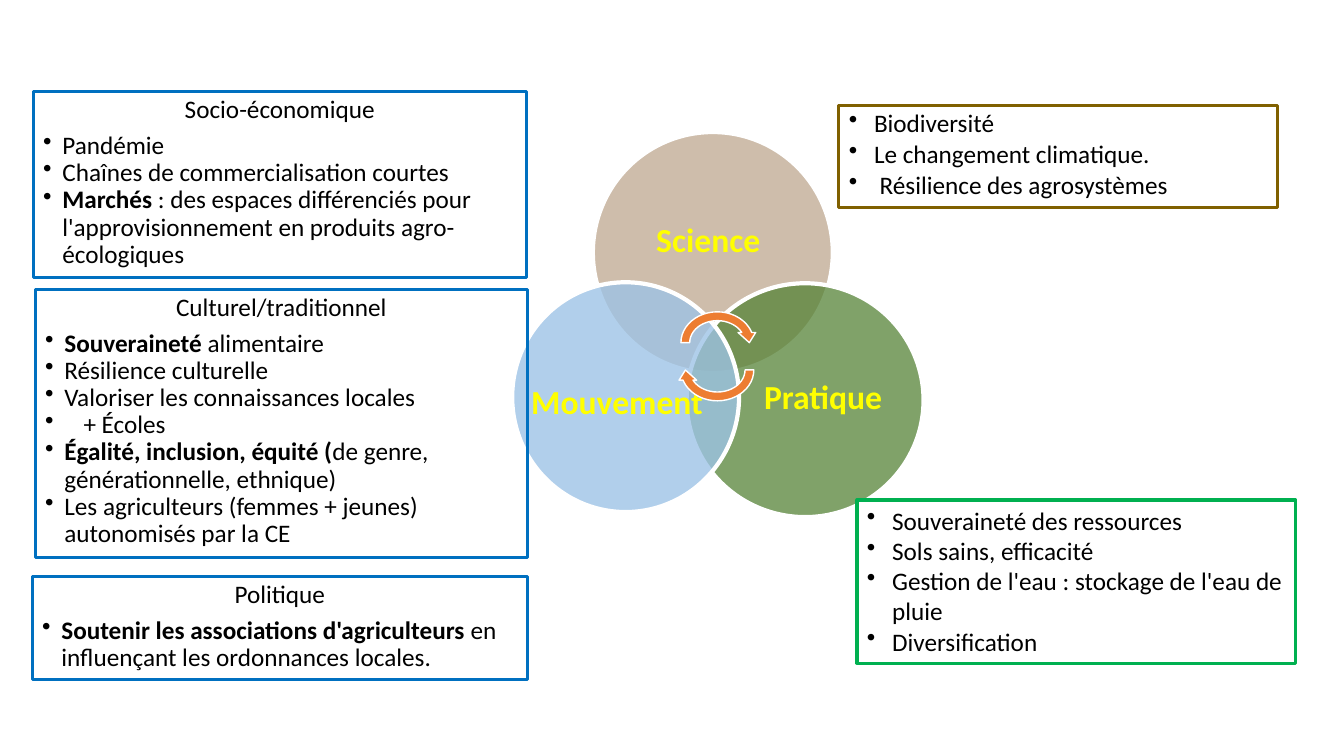
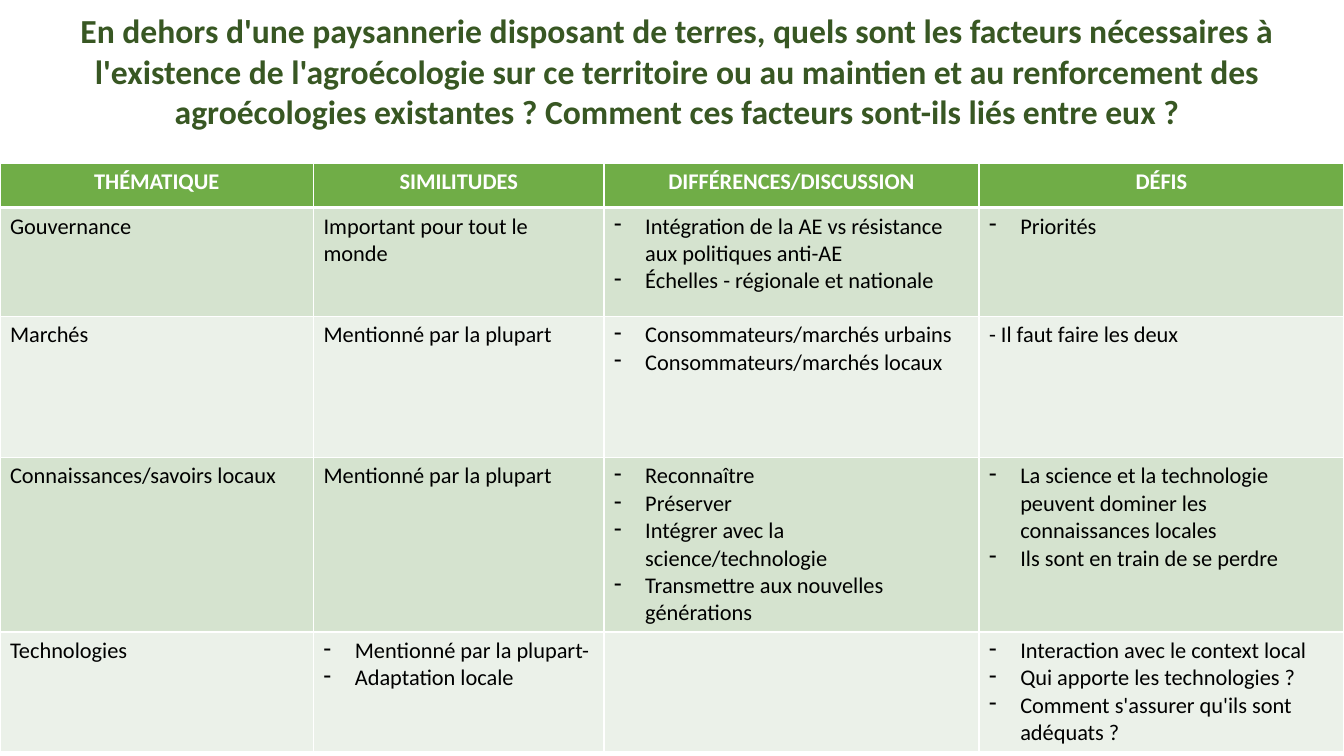
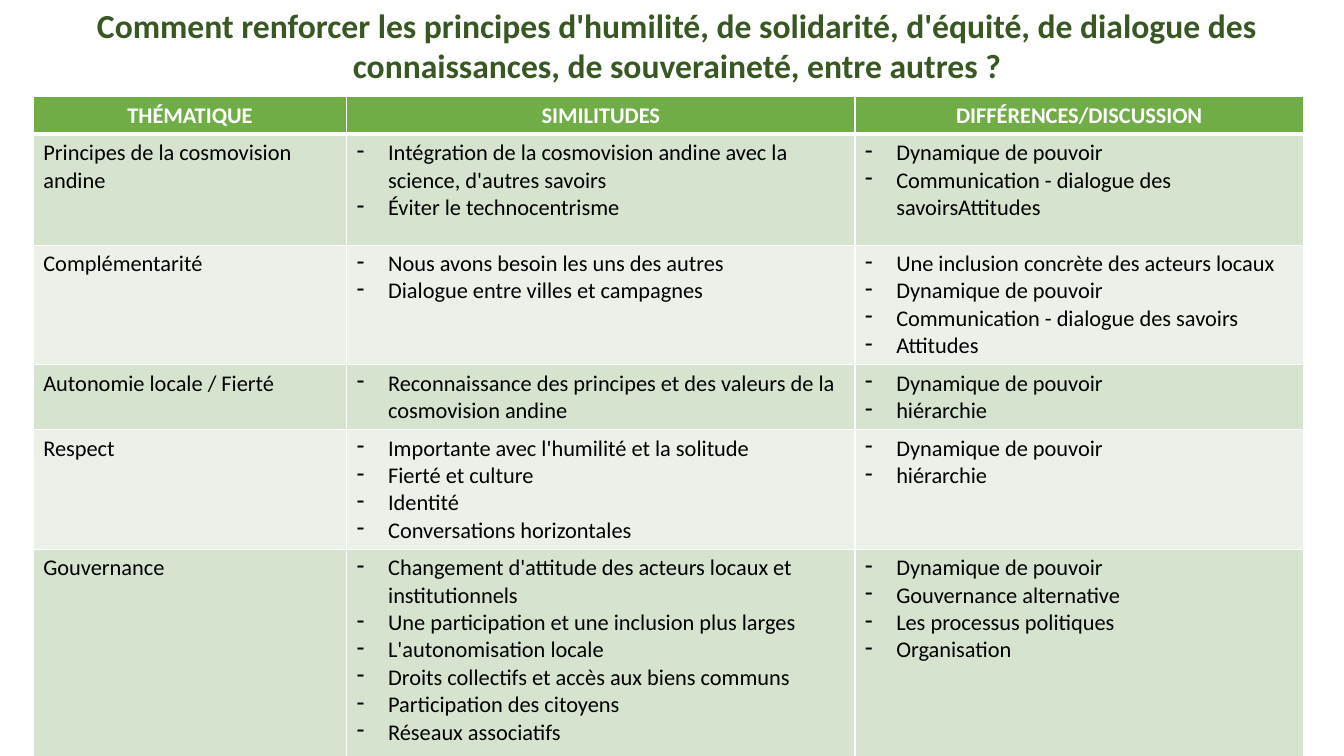
from lxml.etree import SubElement
from pptx import Presentation
from pptx.dml.color import RGBColor
from pptx.enum.shapes import MSO_SHAPE
from pptx.enum.text import MSO_ANCHOR, PP_ALIGN
from pptx.oxml.ns import qn
from pptx.util import Pt

PX = 9144
FONT = "Calibri"
BLACK, WHITE, YELLOW = "000000", "FFFFFF", "FFFF00"
BLUE, GREEN, BROWN, ORANGE = "0070C0", "00B050", "806000", "ED7D31"
TITLE_GREEN, HEADER_GREEN = "385723", "70AD47"
BANDS = ("D5E3CF", "EBF1E9")
THEMES = "THÉMATIQUE"
SIMILARITIES = "SIMILITUDES"
DIFFERENCES = "DIFFÉRENCES/DISCUSSION"
POWER = "Dynamique de pouvoir"

CIRCLES = [
    ("Science", "A2825E", 52, (588, 131, 238, 239), (641, 212, 125, 50)),
    ("Pratique", "548235", 74, (681, 281, 235, 232), (748, 368, 139, 50)),
    ("Mouvement", "9DC3E6", 79, (508, 280, 225, 228), (517, 373, 192, 50)),
]

MOVEMENT_BOXES = [
    ((33, 91, 489, 184), "Socio-économique", [
        "Pandémie",
        "Chaînes de commercialisation courtes",
        ("Marchés", " : des espaces différenciés pour l'approvisionnement en produits agro-écologiques"),
    ]),
    ((35, 287, 488, 266), "Culturel/traditionnel", [
        ("Souveraineté", " alimentaire"),
        "Résilience culturelle",
        "Valoriser les connaissances locales",
        "+ Écoles",
        ("Égalité, inclusion, équité (", "de genre, générationnelle, ethnique)"),
        "Les agriculteurs (femmes + jeunes) autonomisés par la CE",
    ]),
    ((32, 572, 491, 102), "Politique", [
        ("Soutenir les associations d'agriculteurs ", "en influençant les ordonnances locales."),
    ]),
]

PRACTICE_ITEMS = [
    "Souveraineté des ressources",
    "Sols sains, efficacité",
    "Gestion de l'eau : stockage de l'eau de pluie",
    "Diversification",
]
SCIENCE_ITEMS = ["Biodiversité", "Le changement climatique.", " Résilience des agrosystèmes"]

FACTORS_TITLE = (
    "En dehors d'une paysannerie disposant de terres, quels sont les facteurs nécessaires à "
    "l'existence de l'agroécologie sur ce territoire ou au maintien et au renforcement des "
    "agroécologies existantes ? Comment ces facteurs sont-ils liés entre eux ?"
)
FACTORS = [
    [THEMES, SIMILARITIES, DIFFERENCES, "DÉFIS"],
    ["Gouvernance", "Important pour tout le monde",
     ["Intégration de la AE vs résistance aux politiques anti-AE",
      "Échelles - régionale et nationale"],
     ["Priorités"]],
    ["Marchés", "Mentionné par la plupart",
     ["Consommateurs/marchés urbains", "Consommateurs/marchés locaux"],
     "- Il faut faire les deux"],
    ["Connaissances/savoirs locaux", "Mentionné par la plupart",
     ["Reconnaître", "Préserver", "Intégrer avec la science/technologie",
      "Transmettre aux nouvelles générations"],
     ["La science et la technologie peuvent dominer les connaissances locales",
      "Ils sont en train de se perdre"]],
    ["Technologies", ["Mentionné par la plupart-", "Adaptation locale"], [],
     ["Interaction avec le context local", "Qui apporte les technologies ?",
      "Comment s'assurer qu'ils sont adéquats ?"]],
]

PRINCIPLES_TITLE = (
    "Comment renforcer les principes d'humilité, de solidarité, d'équité, de dialogue des "
    "connaissances, de souveraineté, entre autres ?"
)
PRINCIPLES = [
    [THEMES, SIMILARITIES, DIFFERENCES],
    ["Principes de la cosmovision andine",
     ["Intégration de la cosmovision andine avec la science, d'autres savoirs",
      "Éviter le technocentrisme"],
     [POWER, "Communication - dialogue des savoirsAttitudes"]],
    ["Complémentarité",
     ["Nous avons besoin les uns des autres", "Dialogue entre villes et campagnes"],
     ["Une inclusion concrète des acteurs locaux", POWER,
      "Communication - dialogue des savoirs", "Attitudes"]],
    ["Autonomie locale / Fierté",
     ["Reconnaissance des principes et des valeurs de la cosmovision andine"],
     [POWER, "hiérarchie"]],
    ["Respect",
     ["Importante avec l'humilité et la solitude", "Fierté et culture", "Identité",
      "Conversations horizontales"],
     [POWER, "hiérarchie"]],
    ["Gouvernance",
     ["Changement d'attitude des acteurs locaux et institutionnels",
      "Une participation et une inclusion plus larges", "L'autonomisation locale",
      "Droits collectifs et accès aux biens communs", "Participation des citoyens",
      "Réseaux associatifs"],
     [POWER, "Gouvernance alternative", "Les processus politiques", "Organisation"]],
]


def emu(lengths):
    """Turn px lengths into EMU."""
    return [length * PX for length in lengths]


def rgb(code):
    """Turn a hex string into a colour."""
    return RGBColor.from_string(code)


def add_run(paragraph, text, size, color=BLACK, bold=False):
    """Add one formatted run."""
    run = paragraph.add_run()
    run.text = text
    run.font.name = FONT
    run.font.size = Pt(size)
    run.font.bold = bold
    run.font.color.rgb = rgb(color)


def next_paragraph(frame):
    """Give the first paragraph while it is empty, else a new one."""
    first = frame.paragraphs[0]
    return frame.add_paragraph() if first.runs else first


def set_bullet(paragraph, mark, indent):
    """Give a paragraph a hanging bullet."""
    properties = paragraph._p.get_or_add_pPr()
    properties.set("marL", str(indent * PX))
    properties.set("indent", str(-indent * PX))
    SubElement(properties, qn("a:buChar"), char=mark)


def add_items(frame, items, size, mark, indent, line=1.0, after=0):
    """Add bulleted items; in a pair the first part is bold."""
    for item in items:
        paragraph = next_paragraph(frame)
        paragraph.alignment = PP_ALIGN.LEFT
        nested = item.startswith("+") if isinstance(item, str) else False
        set_bullet(paragraph, mark, indent * 2 if nested else indent)
        paragraph.line_spacing = line
        paragraph.space_after = Pt(after)
        if isinstance(item, str):
            add_run(paragraph, item, size)
        else:
            strong, plain = item
            add_run(paragraph, strong, size, bold=True)
            add_run(paragraph, plain, size)


def add_figure(slide, kind, bounds, outline, width, fill=None, opacity=100):
    """Add an outlined shape, filled or hollow."""
    figure = slide.shapes.add_shape(kind, *emu(bounds))
    figure.shadow.inherit = False
    figure.line.color.rgb = rgb(outline)
    figure.line.width = Pt(width)
    if fill is None:
        figure.fill.background()
        return figure
    figure.fill.solid()
    figure.fill.fore_color.rgb = rgb(fill)
    if opacity < 100:
        tint = figure.fill._xPr.find(qn("a:solidFill"))[0]
        SubElement(tint, qn("a:alpha"), val=str(opacity * 1000))
    return figure


def add_box(slide, bounds, outline):
    """Add a hollow box and give its text frame."""
    frame = add_figure(slide, MSO_SHAPE.RECTANGLE, bounds, outline, 2.25).text_frame
    frame.word_wrap = True
    frame.vertical_anchor = MSO_ANCHOR.TOP
    return frame


def add_circle(slide, label, fill, opacity, bounds, label_bounds):
    """Add a translucent circle and its label."""
    add_figure(slide, MSO_SHAPE.OVAL, bounds, WHITE, 3, fill, opacity)
    frame = slide.shapes.add_textbox(*emu(label_bounds)).text_frame
    frame.word_wrap = False
    add_run(frame.paragraphs[0], label, 24, YELLOW, True)


def set_title(slide, text, bounds):
    """Place and fill the title."""
    title = slide.shapes.title
    title.left, title.top, title.width, title.height = emu(bounds)
    frame = title.text_frame
    frame.word_wrap = True
    frame.vertical_anchor = MSO_ANCHOR.TOP
    paragraph = frame.paragraphs[0]
    paragraph.alignment = PP_ALIGN.CENTER
    add_run(paragraph, text, 24, TITLE_GREEN, True)


def set_borders(cell, top, bottom):
    """Draw white borders round a cell."""
    properties = cell._tc.get_or_add_tcPr()
    for side, width in (("L", 1), ("R", 1), ("T", top), ("B", bottom)):
        border = SubElement(properties, qn(f"a:ln{side}"), w=str(Pt(width)))
        SubElement(SubElement(border, qn("a:solidFill")), qn("a:srgbClr"), val=WHITE)


def fill_cell(cell, content, row):
    """Format one cell; a list becomes dashed items."""
    header = row == 0
    set_borders(cell, 3 if row == 1 else 1, 3 if header else 1)
    cell.fill.solid()
    cell.fill.fore_color.rgb = rgb(HEADER_GREEN if header else BANDS[(row - 1) % 2])
    if isinstance(content, list):
        add_items(cell.text_frame, content, 16, "-", 31)
        return
    paragraph = cell.text_frame.paragraphs[0]
    paragraph.alignment = PP_ALIGN.CENTER if header else PP_ALIGN.LEFT
    add_run(paragraph, content, 16, WHITE if header else BLACK, header)


def add_grid(slide, left, top, widths, heights, rows):
    """Add a banded table with a header row."""
    bounds = emu((left, top, sum(widths), sum(heights)))
    table = slide.shapes.add_table(len(heights), len(widths), *bounds).table
    table.horz_banding = False
    for column, width in zip(table.columns, emu(widths)):
        column.width = width
    for line, height in zip(table.rows, emu(heights)):
        line.height = height
    for row, contents in enumerate(rows):
        for column, content in enumerate(contents):
            fill_cell(table.cell(row, column), content, row)


def build_dimensions(slide):
    """Show the three linked dimensions and their themes."""
    for circle in CIRCLES:
        add_circle(slide, *circle)
    for top, turn in ((305, 0), (332, 180)):
        arrow = add_figure(slide, MSO_SHAPE.CIRCULAR_ARROW, (671, top, 81, 70), WHITE, 1, ORANGE)
        arrow.rotation = turn
    for bounds, heading, items in MOVEMENT_BOXES:
        frame = add_box(slide, bounds, BLUE)
        paragraph = frame.paragraphs[0]
        paragraph.alignment = PP_ALIGN.CENTER
        paragraph.line_spacing = 0.9
        paragraph.space_after = Pt(6.3)
        add_run(paragraph, heading, 18)
        add_items(frame, items, 18, "•", 19, 0.9)
    add_items(add_box(slide, (850, 496, 435, 162), GREEN), PRACTICE_ITEMS, 18, "•", 25)
    add_items(add_box(slide, (832, 105, 435, 101), BROWN), SCIENCE_ITEMS, 18, "•", 25, 0.9, 2.7)


def main():
    """Build the presentation."""
    deck = Presentation()
    deck.slide_width, deck.slide_height = emu((1333, 750))
    title_only, blank = deck.slide_layouts[5], deck.slide_layouts[6]

    build_dimensions(deck.slides.add_slide(blank))

    factors = deck.slides.add_slide(title_only)
    add_grid(factors, 0, 162, (311, 288, 372, 362), (44, 108, 140, 170, 116), FACTORS)
    set_title(factors, FACTORS_TITLE, (53, 5, 1237, 131))

    principles = deck.slides.add_slide(title_only)
    add_grid(principles, 33, 96, (311, 504, 445), (36, 110, 115, 62, 115, 209), PRINCIPLES)
    set_title(principles, PRINCIPLES_TITLE, (53, 0, 1237, 91))

    deck.save("out.pptx")


if __name__ == "__main__":
    main()
